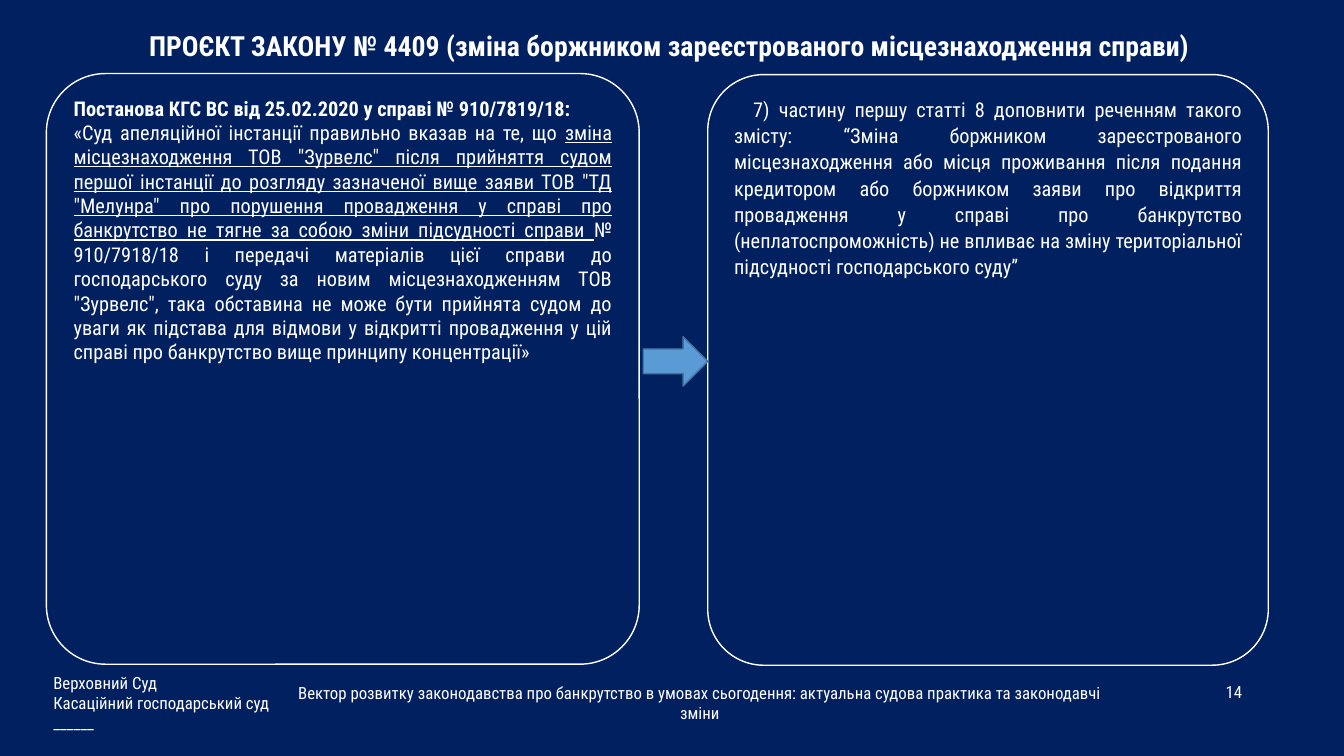
import dataclasses

import pptx
import pptx.dml.color
import pptx.enum.shapes
import pptx.enum.text
import pptx.util

SHAPE = pptx.enum.shapes.MSO_SHAPE
ALIGN = pptx.enum.text.PP_ALIGN
ANCHOR = pptx.enum.text.MSO_ANCHOR
WIDTH = pptx.util.Inches(13.33)
HEIGHT = pptx.util.Inches(7.5)


@dataclasses.dataclass(frozen=True)
class Theme:
    """Colours, font and type sizes of the slide."""
    navy: str = "002060"
    white: str = "FFFFFF"
    blue: str = "5B9BD5"
    edge: str = "43739E"
    font: str = "Roboto Condensed"
    head: float = 19.8
    body: float = 14.5
    foot: float = 12


THEME = Theme()

TITLE = "ПРОЄКТ ЗАКОНУ № 4409 (зміна боржником зареєстрованого місцезнаходження справи)"
RULING = "Постанова КГС ВС від 25.02.2020 у справі № 910/7819/18:"
QUOTE = (
    "«Суд апеляційної інстанції правильно вказав на те, що ",
    "зміна місцезнаходження ТОВ \"Зурвелс\" після прийняття судом першої інстанції "
    "до розгляду зазначеної вище заяви ТОВ \"ТД \"Мелунра\" про порушення провадження "
    "у справі про банкрутство не тягне за собою зміни підсудності справи ",
    "№ 910/7918/18 і передачі матеріалів цієї справи до господарського суду за новим "
    "місцезнаходженням ТОВ \"Зурвелс\", така обставина не може бути прийнята судом до "
    "уваги як підстава для відмови у відкритті провадження у цій справі про банкрутство "
    "вище принципу концентрації»",
)
CHANGE = (
    "7) частину першу статті 8 доповнити реченням такого змісту: “Зміна боржником "
    "зареєстрованого місцезнаходження або місця проживання після подання кредитором або "
    "боржником заяви про відкриття провадження у справі про банкрутство "
    "(неплатоспроможність) не впливає на зміну територіальної підсудності "
    "господарського суду”"
)
COURT = "Верховний Суд\nКасаційний господарський суд\n______"
TOPIC = (
    "Вектор розвитку законодавства про банкрутство в умовах сьогодення: "
    "актуальна судова практика та законодавчі зміни"
)


def color(code):
    """Turn a hex code into a colour."""
    return pptx.dml.color.RGBColor.from_string(code)


def place(left, top, width, height):
    """Turn percent shares of the slide into lengths."""
    return (round(WIDTH * left / 100), round(HEIGHT * top / 100),
            round(WIDTH * width / 100), round(HEIGHT * height / 100))


def style(para, size, align=ALIGN.LEFT, bold=False):
    """Format a paragraph and its runs."""
    para.alignment = align
    for run in para.runs:
        run.font.name = THEME.font
        run.font.size = pptx.util.Pt(size)
        run.font.bold = bold
        run.font.color.rgb = color(THEME.white)


def label(slide, area, text, size, align=ALIGN.LEFT, bold=False):
    """Add a text box centred on its height."""
    frame = slide.shapes.add_textbox(*place(*area)).text_frame
    frame.word_wrap = True
    frame.vertical_anchor = ANCHOR.MIDDLE
    frame.text = text
    for para in frame.paragraphs:
        style(para, size, align, bold)


def block(slide, kind, area, fill, line):
    """Add a filled and outlined shape."""
    shape = slide.shapes.add_shape(kind, *place(*area))
    shape.shadow.inherit = False
    shape.fill.solid()
    shape.fill.fore_color.rgb = color(fill)
    shape.line.color.rgb = color(line)
    shape.line.width = pptx.util.Pt(1)
    return shape


def panel(slide, area):
    """Add a rounded panel and return its text frame."""
    shape = block(slide, SHAPE.ROUNDED_RECTANGLE, area, THEME.navy, THEME.white)
    shape.adjustments[0] = 0.1
    frame = shape.text_frame
    frame.word_wrap = True
    frame.vertical_anchor = ANCHOR.TOP
    return frame


def ruling(slide):
    """Add the panel with the court ruling."""
    frame = panel(slide, (3.45, 9.73, 44.11, 78.13))
    frame.text = RULING
    style(frame.paragraphs[0], THEME.body, bold=True)
    para = frame.add_paragraph()
    for text in QUOTE:
        para.add_run().text = text
    style(para, THEME.body, ALIGN.JUSTIFY)
    para.runs[1].font.underline = True


def change(slide):
    """Add the panel with the proposed wording."""
    frame = panel(slide, (52.66, 9.87, 41.71, 78.13))
    frame.text = CHANGE
    para = frame.paragraphs[0]
    style(para, THEME.body, ALIGN.JUSTIFY)
    para.line_spacing = 1.07
    para._p.get_or_add_pPr().set("indent", str(pptx.util.Inches(0.19)))


def main():
    """Build and save the slide."""
    deck = pptx.Presentation()
    deck.slide_width, deck.slide_height = WIDTH, HEIGHT
    slide = deck.slides.add_slide(deck.slide_layouts[6])
    slide.background.fill.solid()
    slide.background.fill.fore_color.rgb = color(THEME.navy)
    label(slide, (3.45, 2.4, 92.65, 7.2), TITLE, THEME.head, ALIGN.CENTER, True)
    label(slide, (70.67, 89.33, 22.5, 4.4), "14", THEME.foot, ALIGN.RIGHT)
    label(slide, (3.23, 88, 19.05, 10), COURT, THEME.foot)
    ruling(slide)
    change(slide)
    block(slide, SHAPE.RIGHT_ARROW, (47.86, 44.53, 4.8, 6.53), THEME.blue, THEME.edge)
    label(slide, (20.03, 89.73, 64.07, 6.53), TOPIC, THEME.foot, ALIGN.CENTER)
    deck.save("out.pptx")


if __name__ == "__main__":
    main()
